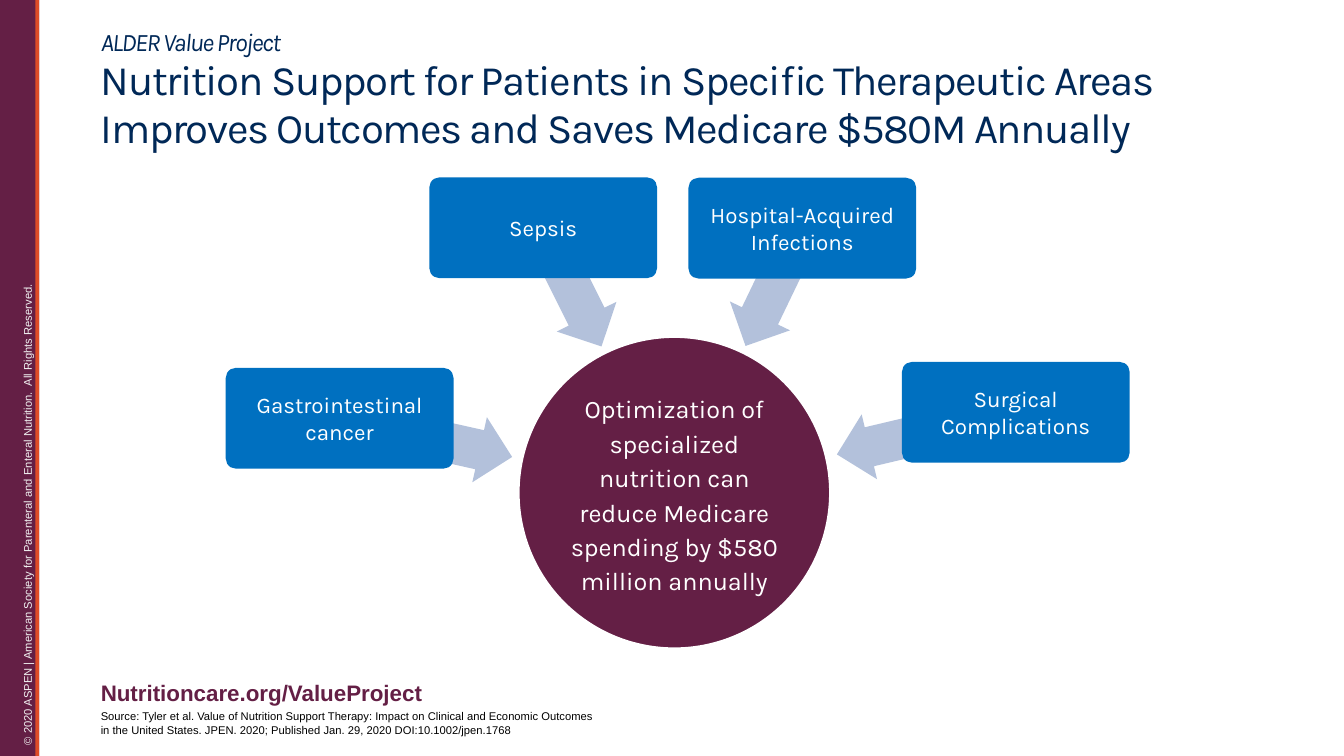
from pptx import Presentation
from pptx.dml.color import RGBColor
from pptx.enum import shapes, text
from pptx.util import Cm, Pt

COLORS = {
    "plum": "641F45", "orange": "DE4C27", "blue": "0070C0", "arrow": "B3C1DB",
    "navy": "002857", "white": "FFFFFF", "pale": "F2F2F2", "black": "000000",
}
SHAPE = shapes.MSO_SHAPE
AREA_SIZE = (5.74, 2.54)
ARROW_HEIGHT = 1.68
AREAS = [
    ("Gastrointestinal cancer", (5.69, 9.27), (8.51, 10.19, 4.45), 192.6),
    ("Sepsis", (10.82, 4.47), (12.75, 6.4, 3.33), 243.5),
    ("Hospital-Acquired Infections", (17.35, 4.48), (17.86, 6.4, 3.28), 295.7),
    ("Surgical Complications", (22.73, 9.12), (21.03, 10.08, 4.62), 346.7),
]
TITLE_LINES = [
    ("ALDER Value Project", 18, True),
    ("Nutrition Support for Patients in Specific Therapeutic Areas ", 30, False),
    ("Improves Outcomes and Saves Medicare $580M Annually", 30, False),
]


def rgb(name):
    return RGBColor.from_string(COLORS[name])


def set_font(font, color, **values):
    for name, value in values.items():
        setattr(font, name, value)
    font.color.rgb = rgb(color)


def set_frame(frame, inset, anchor):
    values = {"word_wrap": True, "vertical_anchor": anchor}
    for side in ("left", "right", "top", "bottom"):
        values[f"margin_{side}"] = Cm(inset)
    for name, value in values.items():
        setattr(frame, name, value)


def add_block(slide, kind, bounds, color, corners=(), rotation=0):
    block = slide.shapes.add_shape(kind, *map(Cm, bounds))
    block.shadow.inherit = False
    block.fill.solid()
    block.fill.fore_color.rgb = rgb(color)
    block.line.fill.background()
    block.rotation = rotation
    for index, value in enumerate(corners):
        block.adjustments[index] = value
    return block


def label_block(block, wording, size, inset, spacing=1.0):
    set_frame(block.text_frame, inset, text.MSO_ANCHOR.MIDDLE)
    label = block.text_frame.paragraphs[0]
    label.text = wording
    label.alignment = text.PP_ALIGN.CENTER
    label.line_spacing = spacing
    set_font(label.font, "white", name="Karla", size=Pt(size))


def add_note(slide, bounds, wording, color, size, bold=False, inset=0, rotation=0):
    note = slide.shapes.add_textbox(*map(Cm, bounds))
    note.rotation = rotation
    set_frame(note.text_frame, inset, text.MSO_ANCHOR.TOP)
    line = note.text_frame.paragraphs[0]
    line.text = wording
    set_font(line.font, color, name="Arial", size=Pt(size), bold=bold)


def add_title(slide):
    title = slide.shapes.title
    title.left, title.top, title.width, title.height = map(Cm, (2.54, 0.33, 28.78, 3.91))
    set_frame(title.text_frame, 0, text.MSO_ANCHOR.MIDDLE)
    title.text_frame.auto_size = text.MSO_AUTO_SIZE.NONE
    heading = title.text_frame.paragraphs[0]
    heading.alignment = text.PP_ALIGN.LEFT
    heading.line_spacing = 0.95
    for index, (wording, size, italic) in enumerate(TITLE_LINES):
        if index:
            heading.add_line_break()
        run = heading.add_run()
        run.text = wording
        set_font(run.font, "navy", name="Karla", size=Pt(size), italic=italic)
        run.font._element.set("spc", "-100")


def add_sidebar(slide):
    add_block(slide, SHAPE.RECTANGLE, (0, 0, 0.99, 19.05), "plum")
    add_note(slide, (-7.42, 10.49, 16.23, 0.61),
             "© 2020 ASPEN | American Society for Parenteral and Enteral Nutrition.  All Rights Reserved.",
             "pale", 8, inset=0.13, rotation=270)
    add_block(slide, SHAPE.RECTANGLE, (0.89, 0, 0.1, 19.05), "orange")


def add_diagram(slide):
    hub = add_block(slide, SHAPE.OVAL, (13.06, 8.48, 7.87, 7.87), "plum")
    hub.line.color.rgb = rgb("white")
    hub.line.width = Pt(2)
    label_block(hub, "Optimization of specialized nutrition can reduce Medicare "
                "spending by $580 million annually", 18, 0.03, 1.14)
    for wording, corner, arrow, angle in AREAS:
        add_block(slide, SHAPE.LEFT_ARROW, (*arrow, ARROW_HEIGHT), "arrow", (0.6, 0.5), angle)
        area = add_block(slide, SHAPE.ROUNDED_RECTANGLE, (*corner, *AREA_SIZE), "blue", (0.1,))
        label_block(area, wording, 16, 0.08)


def main():
    deck = Presentation()
    deck.slide_width, deck.slide_height = Cm(33.87), Cm(19.05)
    slide = deck.slides.add_slide(deck.slide_layouts[5])
    add_sidebar(slide)
    add_diagram(slide)
    add_title(slide)
    add_note(slide, (2.54, 17.88, 12.7, 0.69),
             "Source: Tyler et al. Value of Nutrition Support Therapy: Impact on Clinical and "
             "Economic Outcomes in the United States. JPEN. 2020; Published Jan. 29, 2020 "
             "DOI:10.1002/jpen.1768", "black", 8)
    add_note(slide, (2.54, 17.12, 11.3, 0.69), "Nutritioncare.org/ValueProject", "plum", 16, bold=True)
    deck.save("out.pptx")


if __name__ == "__main__":
    main()
